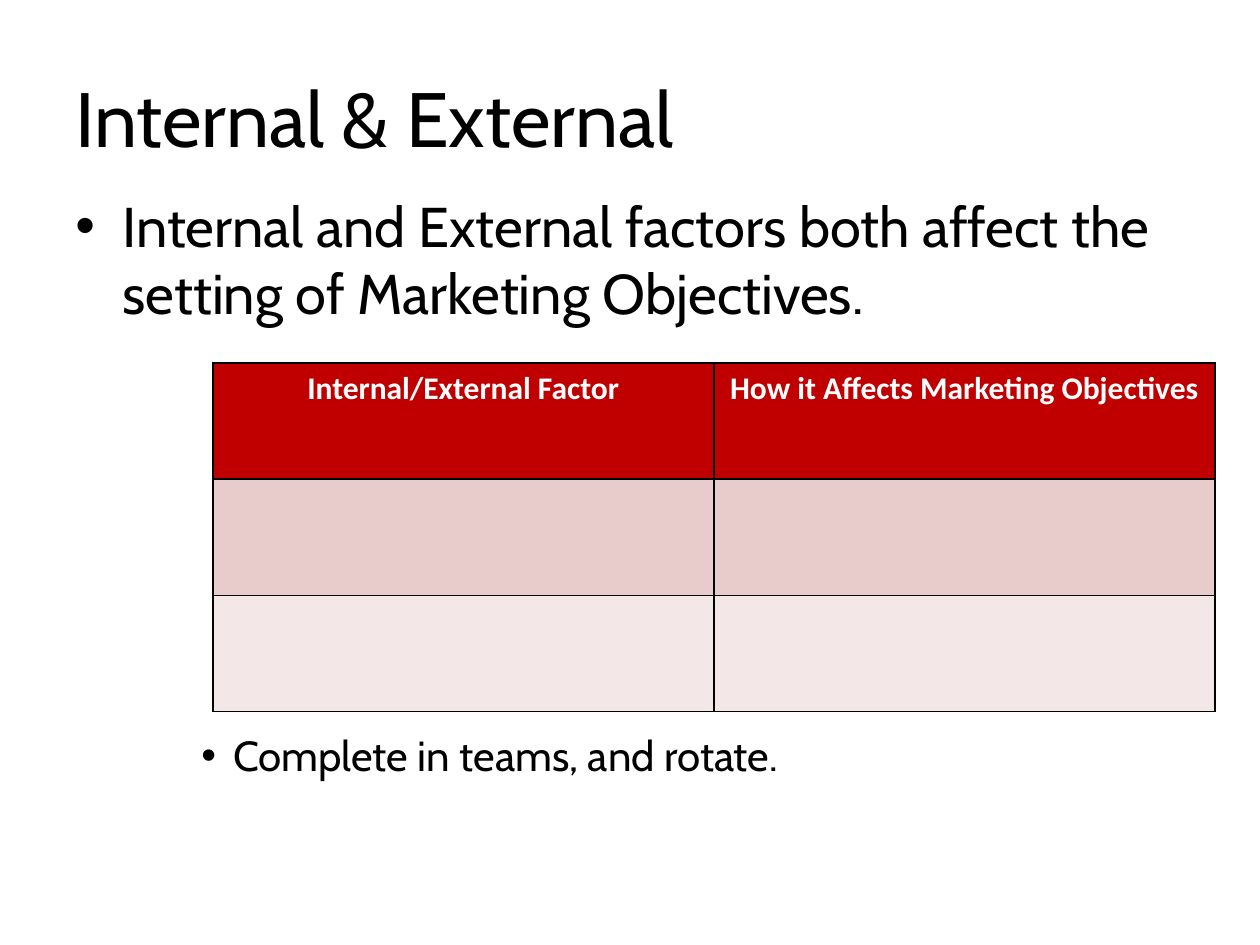
from typing import NamedTuple

from lxml.etree import SubElement
from pptx import Presentation
from pptx.dml.color import RGBColor
from pptx.enum.text import MSO_ANCHOR, PP_ALIGN
from pptx.oxml.ns import qn
from pptx.util import Cm, Pt


class Note(NamedTuple):
    text: str
    top: float
    high: float
    size: int
    left: float = 0
    hang: float = 0
    anchor: MSO_ANCHOR = MSO_ANCHOR.TOP


class Row(NamedTuple):
    fill: str
    cells: tuple[str, ...]


EDGE, WIDE = 1.27, 22.86
NOTES = [
    Note("Internal & External", 0.76, 3.18, 44, anchor=MSO_ANCHOR.MIDDLE),
    Note("Internal and External factors both affect the setting of "
         "Marketing Objectives.", 3.73, 3.2, 32, 0.95, 0.95),
    Note("Complete in teams, and rotate.", 14.58, 1.4, 24, 3.18, 0.64),
]
ROWS = [
    Row("C00000", ("Internal/External Factor",
                   "How it Affects Marketing Objectives")),
    Row("E8CCCC", ("", "")),
    Row("F4E7E7", ("", "")),
]
COL_WIDE, ROW_HIGH = 10.1, 2.34


def color(code: str) -> RGBColor:
    return RGBColor.from_string(code)


def add_run(para, text: str, face: str, size: int, code: str,
            bold: bool = False) -> None:
    run = para.add_run()
    run.text = text
    font = run.font
    font.name, font.size, font.bold = face, Pt(size), bold
    font.color.rgb = color(code)


def add_note(slide, note: Note) -> None:
    box = slide.shapes.add_textbox(Cm(EDGE), Cm(note.top),
                                   Cm(WIDE), Cm(note.high))
    frame = box.text_frame
    frame.word_wrap = True
    frame.vertical_anchor = note.anchor
    para = frame.paragraphs[0]
    if note.hang:
        props = para._p.get_or_add_pPr()
        props.set("marL", str(Cm(note.left)))
        props.set("indent", str(-Cm(note.hang)))
        SubElement(props, qn("a:buFont"), typeface="Arial")
        SubElement(props, qn("a:buChar"), char="•")
    add_run(para, note.text, "Cabin", note.size, "000000")


def add_edges(cell) -> None:
    """Draw a thin black line on all four sides; call before the fill is set."""
    props = cell._tc.get_or_add_tcPr()
    for side in ("lnL", "lnR", "lnT", "lnB"):
        line = SubElement(props, qn(f"a:{side}"), w=str(Pt(1)))
        fill = SubElement(line, qn("a:solidFill"))
        SubElement(fill, qn("a:srgbClr"), val="000000")


def add_grid(slide, rows: list[Row]) -> None:
    cols = len(rows[0].cells)
    grid = slide.shapes.add_table(
        len(rows), cols, Cm(4.29), Cm(7.32),
        Cm(COL_WIDE * cols), Cm(ROW_HIGH * len(rows))).table
    for y, row in enumerate(rows):
        for x, text in enumerate(row.cells):
            cell = grid.cell(y, x)
            add_edges(cell)
            cell.fill.solid()
            cell.fill.fore_color.rgb = color(row.fill)
            if text:
                para = cell.text_frame.paragraphs[0]
                para.alignment = PP_ALIGN.CENTER
                add_run(para, text, "Calibri", 18, "FFFFFF", True)


def main() -> None:
    deck = Presentation()
    deck.slide_width, deck.slide_height = Cm(25.4), Cm(19.05)
    slide = deck.slides.add_slide(deck.slide_layouts[6])
    for note in NOTES:
        add_note(slide, note)
    add_grid(slide, ROWS)
    deck.save("out.pptx")


if __name__ == "__main__":
    main()
